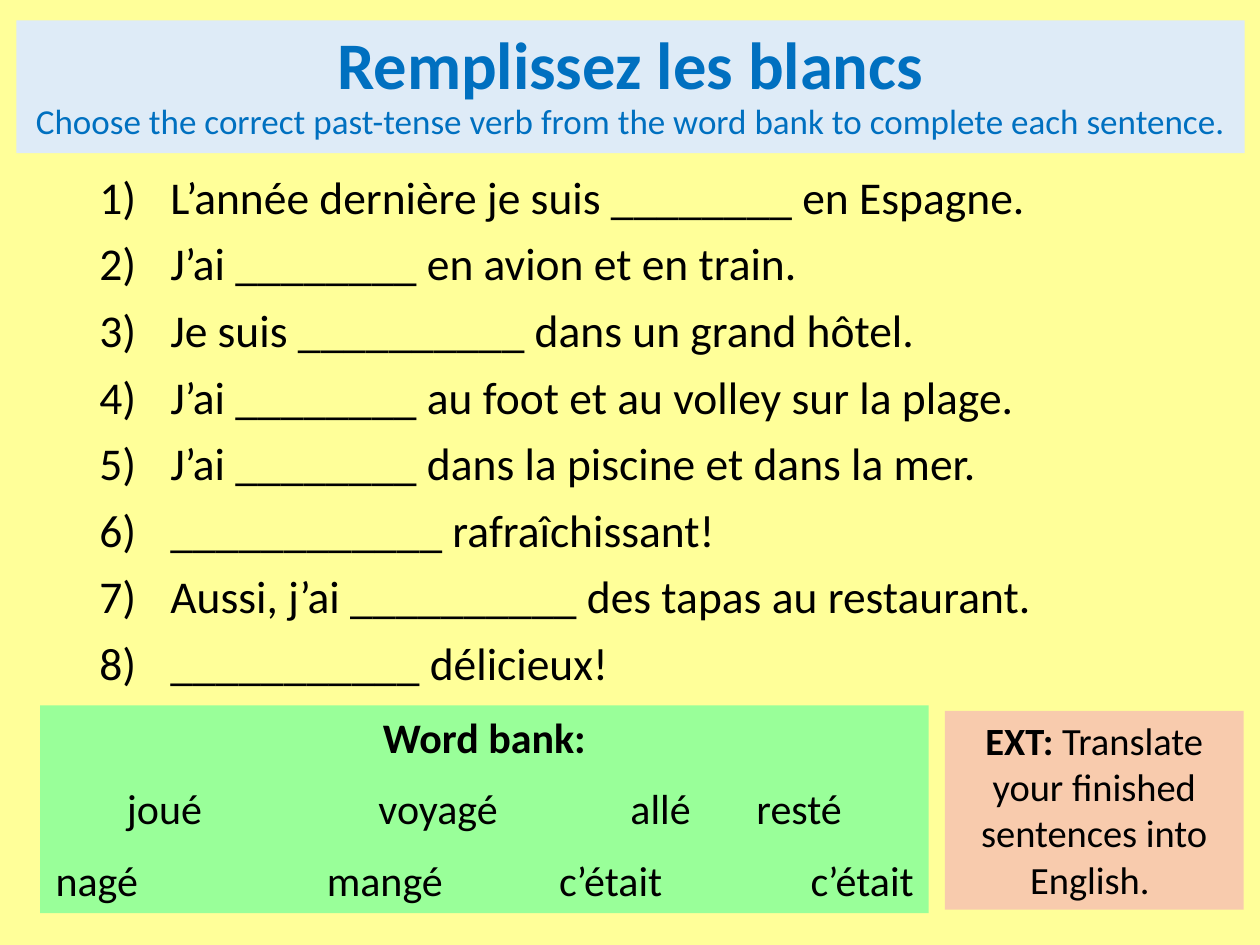
"""Build a French fill-in-the-blanks slide with a word bank and an extension task."""
from lxml.etree import SubElement
from pptx import Presentation
from pptx.dml.color import RGBColor
from pptx.enum.text import MSO_ANCHOR, MSO_AUTO_SIZE, PP_ALIGN
from pptx.oxml.ns import qn
from pptx.util import Cm, Pt

YELLOW = RGBColor(0xFF, 0xFF, 0x99)
PALE = RGBColor(0xDE, 0xEB, 0xF7)
BLUE = RGBColor(0x00, 0x70, 0xC0)
GREEN = RGBColor(0x99, 0xFF, 0x99)
PEACH = RGBColor(0xF8, 0xCB, 0xAD)
BLACK = RGBColor(0, 0, 0)

LINES = [
    "L’année dernière je suis ________ en Espagne.",
    "J’ai ________ en avion et en train.",
    "Je suis __________ dans un grand hôtel.",
    "J’ai ________ au foot et au volley sur la plage.",
    "J’ai ________ dans la piscine et dans la mer.",
    "____________ rafraîchissant!",
    "Aussi, j’ai __________ des tapas au restaurant.",
    "___________ délicieux!",
]
BANK = [
    [("joué", 1.5), ("voyagé", 6.57), ("allé", 11.65), ("resté", 14.19)],
    [("nagé", 0.06), ("mangé", 5.53), ("c’était", 10.21), ("c’était", 15.28)],
]


def place(shape, left, top, width, height):
    shape.left, shape.top = Cm(left), Cm(top)
    shape.width, shape.height = Cm(width), Cm(height)
    frame = shape.text_frame
    frame.word_wrap = True
    frame.auto_size = MSO_AUTO_SIZE.NONE
    return frame


def style(font, size, color, bold=False):
    font.name = "Calibri"
    font.size = Pt(size)
    font.bold = bold
    font.color.rgb = color


deck = Presentation()
deck.slide_width, deck.slide_height = Cm(25.4), Cm(19.05)
slide = deck.slides.add_slide(deck.slide_layouts[1])
slide.background.fill.solid()
slide.background.fill.fore_color.rgb = YELLOW

title = slide.shapes.title
title.fill.solid()
title.fill.fore_color.rgb = PALE
frame = place(title, 0.33, 0.41, 24.76, 2.68)
frame.vertical_anchor = MSO_ANCHOR.MIDDLE
head = frame.paragraphs[0]
head.alignment = PP_ALIGN.CENTER
head.line_spacing = 0.9
run = head.add_run()
run.text = "Remplissez les blancs"
style(run.font, 38, BLUE, True)
head.add_line_break()
run = head.add_run()
run.text = "Choose the correct past-tense verb from the word bank to complete each sentence."
style(run.font, 20, BLUE)

frame = place(slide.placeholders[1], 1.75, 3.4, 21.9, 13.2)
frame.text = "\n".join(LINES)
for row, para in enumerate(frame.paragraphs):
    props = para._p.get_or_add_pPr()
    props.set("marL", str(Cm(1.43)))
    props.set("indent", str(Cm(-1.43)))
    SubElement(props, qn("a:buFont"), typeface="+mj-lt")
    SubElement(props, qn("a:buAutoNum"), type="arabicParenR")
    para.line_spacing = 0.9
    para.space_before = Pt(10 if row else 0)
    style(para.font, 26, BLACK)

bank = slide.shapes.add_textbox(0, 0, 0, 0)
bank.fill.solid()
bank.fill.fore_color.rgb = GREEN
frame = place(bank, 0.81, 14.22, 17.91, 4.19)
para = frame.paragraphs[0]
para.text = "Word bank:"
para.alignment = PP_ALIGN.CENTER
para.space_after = Pt(12)
style(para.font, 24, BLACK, True)
for words in BANK:
    para = frame.add_paragraph()
    para.text = "".join("\t" + word for word, stop in words)
    tabs = SubElement(para._p.get_or_add_pPr(), qn("a:tabLst"))
    for word, stop in words:
        SubElement(tabs, qn("a:tab"), pos=str(Cm(stop)), algn="l")
    para.alignment = PP_ALIGN.LEFT
    para.space_after = Pt(12)
    style(para.font, 24, BLACK)

task = slide.shapes.add_textbox(0, 0, 0, 0)
task.fill.solid()
task.fill.fore_color.rgb = PEACH
para = place(task, 19.05, 14.33, 6.02, 4.01).paragraphs[0]
para.alignment = PP_ALIGN.CENTER
para.space_after = Pt(12)
for text, bold in [("EXT: ", True), ("Translate your finished sentences into English. ", False)]:
    run = para.add_run()
    run.text = text
    style(run.font, 22, BLACK, bold)

deck.save("out.pptx")
